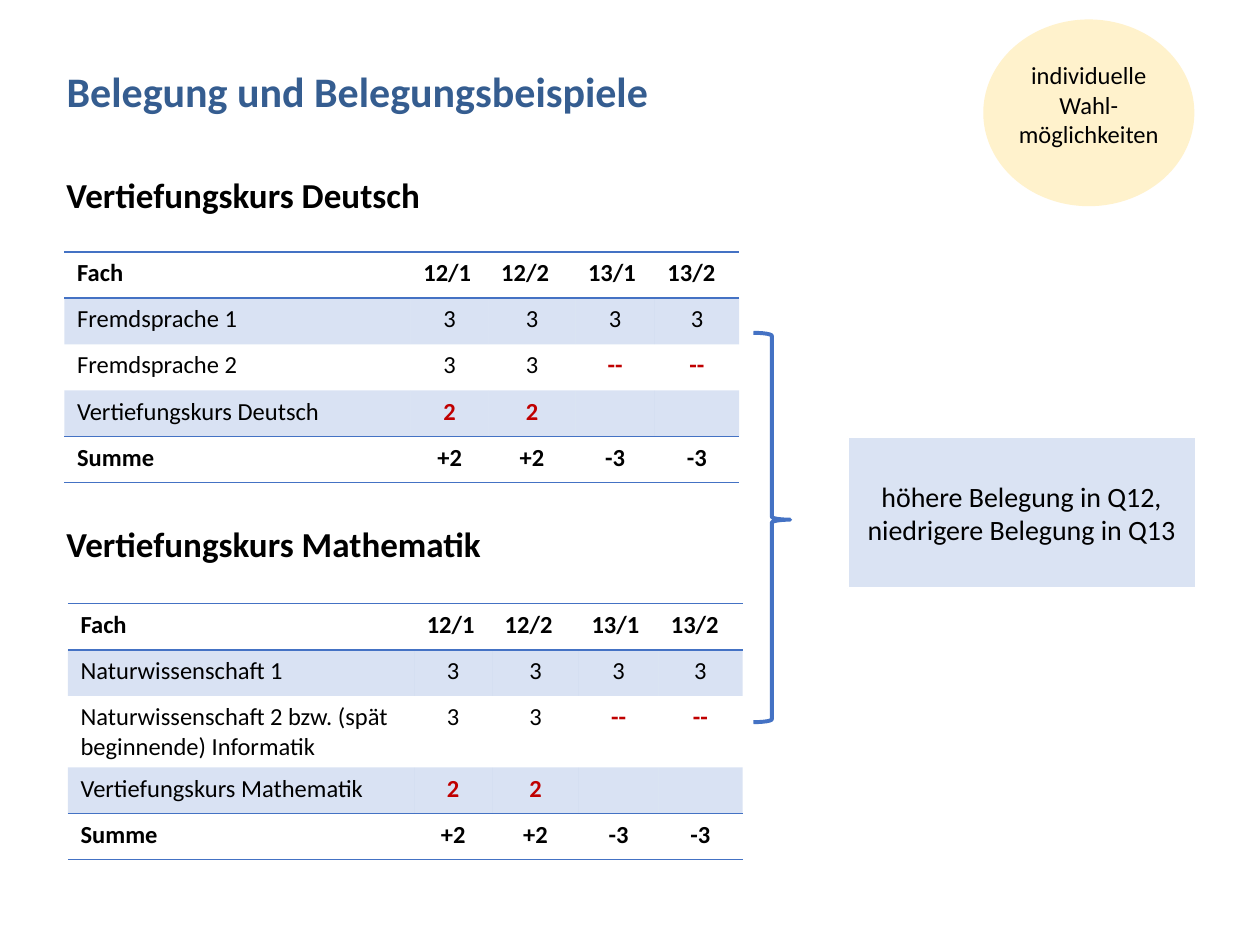
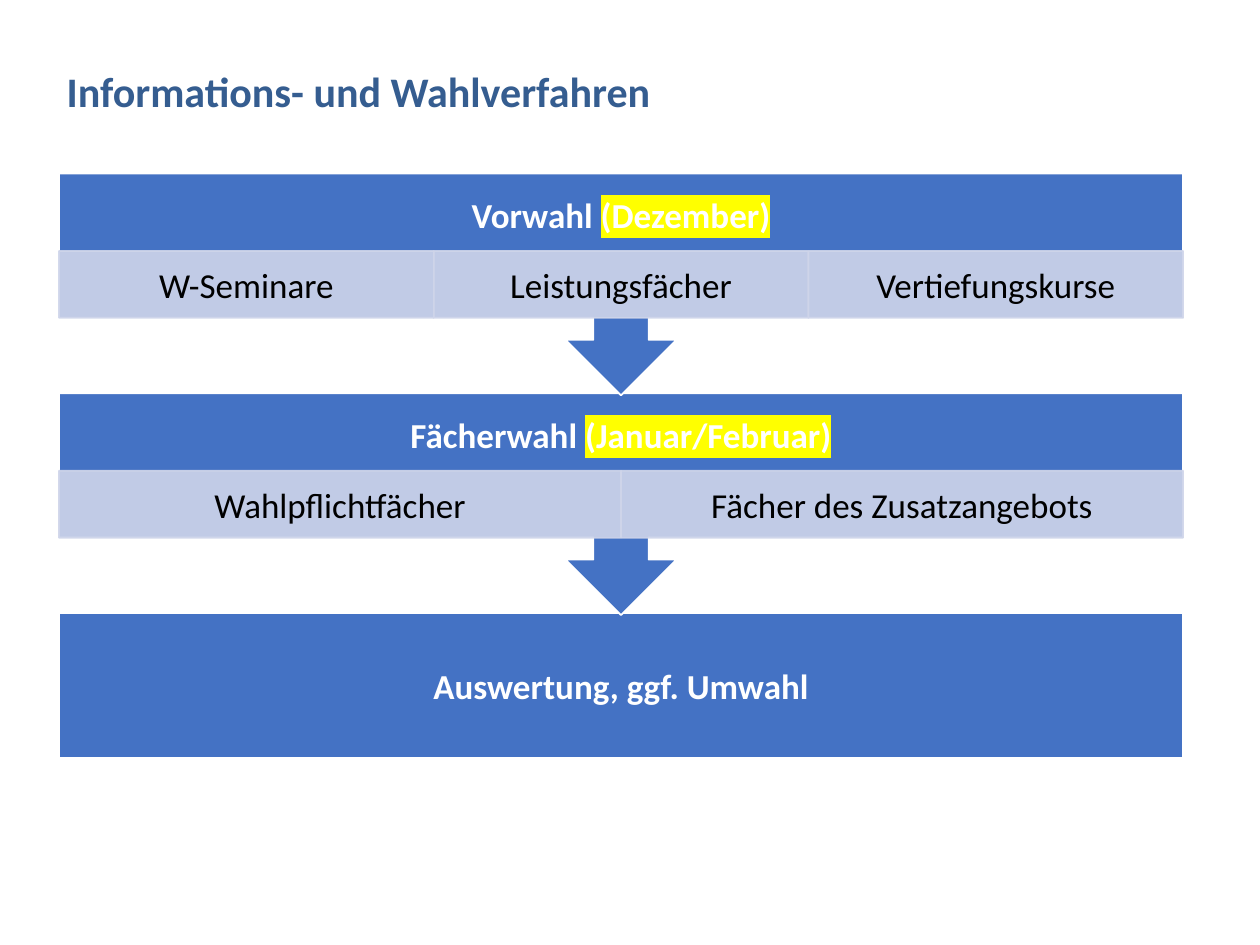
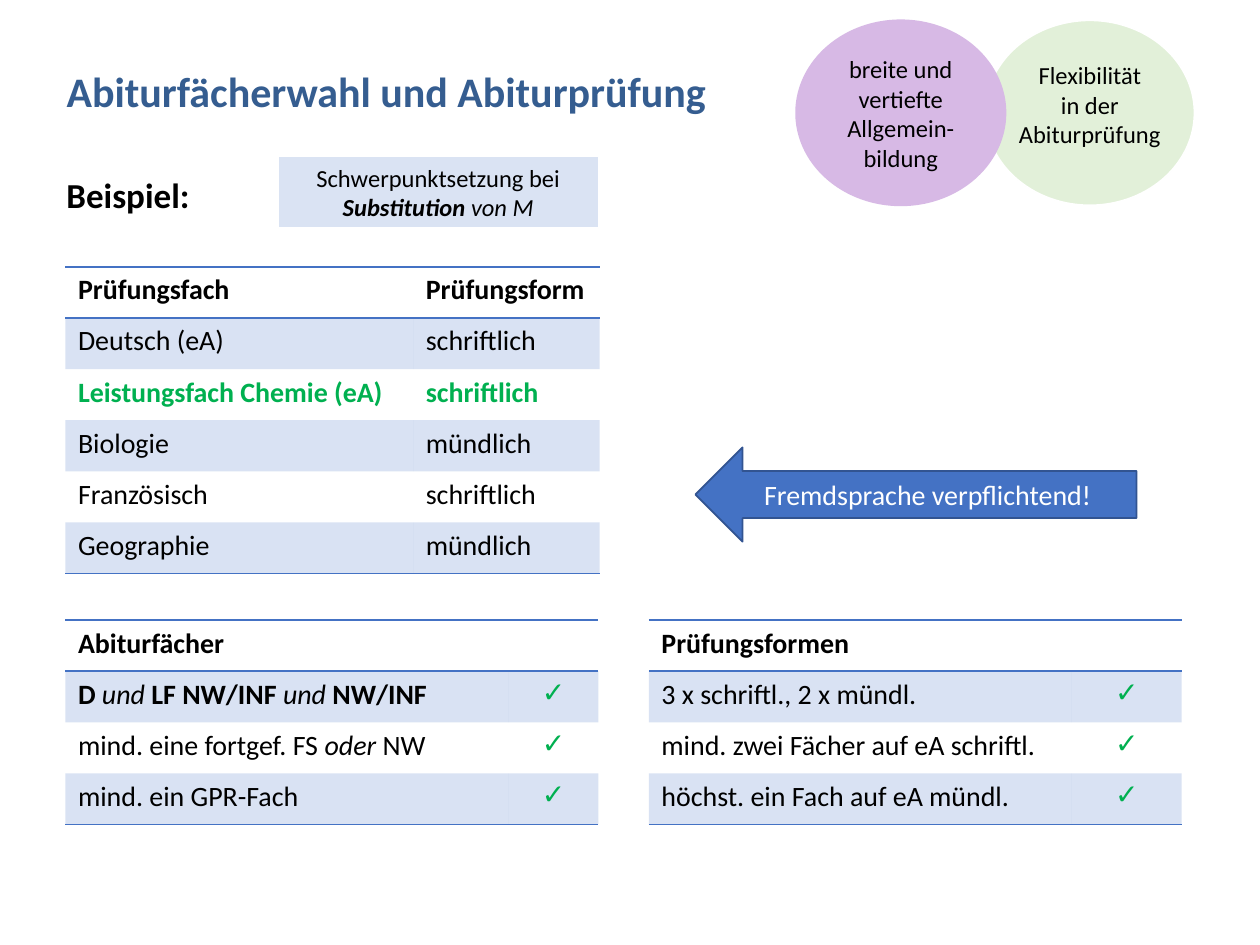
from pptx import Presentation
from pptx.dml.color import RGBColor
from pptx.enum.shapes import MSO_SHAPE as Kind
from pptx.enum.text import MSO_ANCHOR as Anchor, MSO_AUTO_SIZE as AutoSize, PP_ALIGN as Align
from pptx.oxml import parse_xml
from pptx.oxml.ns import nsdecls, qn
from pptx.util import Cm, Pt

BLUE, PALE_BLUE, LILAC = "4472C4", "DAE3F3", "CFD5EA"
TITLE_BLUE, ARROW_EDGE = "355D90", "325491"
RED, GREEN, YELLOW = "C00000", "00B050", "FFFF00"
BLACK, WHITE = "000000", "FFFFFF"
CREAM, MINT, PURPLE = "FFF2CC", "E2F0D9", "D7B9E5"
PLAIN_TABLE = "{2D5ABB26-0587-4C30-8999-92F81FD0307C}"

LEFT = 1.09
BADGE_TOP, BADGE_WIDTH, BADGE_HEIGHT = 0.41, 4.22, 3.73
STEP_LEFT, STEP_TOP, STEP_WIDTH, STEP_PITCH = 1.19, 3.5, 22.66, 4.43

CHECK = [("✓", {"font": "Arial", "color": GREEN, "bold": True})]
NONE = [("--", {"color": RED, "bold": True})]
TWO = [("2", {"color": RED, "bold": True})]
TERMS = ["Fach", "12/1", "12/2", "13/1", "13/2"]
SUM = ["Summe", "+2", "+2", "-3", "-3"]


def rgb(code):
    return RGBColor.from_string(code)


def set_alpha(color_holder, percent):
    """Make the solid colour inside an element partly transparent."""
    color = next(color_holder.iter(qn("a:srgbClr")))
    color.append(parse_xml(f'<a:alpha {nsdecls("a")} val="{percent * 1000}"/>'))


def write(frame, paras, align=Align.LEFT, anchor=Anchor.TOP, **style):
    """Fill a frame; a paragraph is a string or a list of strings and (text, style) spans."""
    frame.word_wrap = True
    frame.vertical_anchor = anchor
    for number, spans in enumerate(paras):
        para = frame.add_paragraph() if number else frame.paragraphs[0]
        para.alignment = align
        for span in [spans] if isinstance(spans, str) else spans:
            text, own = (span, {}) if isinstance(span, str) else span
            add_span(para, text, **{**style, **own})


def add_span(para, text, size=14, font="Calibri", color=BLACK, bold=False, italic=False,
             highlight=None):
    span = para.add_run()
    span.text = text
    span.font.size, span.font.name = Pt(size), font
    span.font.bold, span.font.italic = bold, italic
    span.font.color.rgb = rgb(color)
    if highlight:
        mark = parse_xml(f'<a:highlight {nsdecls("a")}><a:srgbClr val="{highlight}"/></a:highlight>')
        span.font._element.find(qn("a:solidFill")).addnext(mark)


def add_page(deck, title):
    page = deck.slides.add_slide(deck.slide_layouts[5])
    box = page.shapes.title
    box.left, box.top, box.width, box.height = Cm(LEFT), Cm(1.19), Cm(23.8), Cm(2.21)
    box.text_frame.auto_size = AutoSize.NONE
    write(box.text_frame, [title], size=24, color=TITLE_BLUE, bold=True)
    return page


def add_text(page, left, top, width, height, paras, **style):
    box = page.shapes.add_textbox(Cm(left), Cm(top), Cm(width), Cm(height))
    write(box.text_frame, paras, **style)


def add_subhead(page, top, text):
    add_text(page, LEFT, top, 9.1, 1.12, [text], size=20, bold=True)


def add_figure(page, kind, left, top, width, height, fill=None, line=WHITE, weight=1,
               alpha=None, paras=(), anchor=Anchor.MIDDLE, **style):
    figure = page.shapes.add_shape(kind, Cm(left), Cm(top), Cm(width), Cm(height))
    figure.shadow.inherit = False
    if fill:
        figure.fill.solid()
        figure.fill.fore_color.rgb = rgb(fill)
    else:
        figure.fill.background()
    figure.line.color.rgb = rgb(line)
    figure.line.width = Pt(weight)
    if alpha:
        properties = figure._element.spPr
        set_alpha(properties.find(qn("a:solidFill")), alpha)
        set_alpha(properties.find(qn("a:ln")), alpha)
    write(figure.text_frame, paras, align=Align.CENTER, anchor=anchor, **style)
    return figure


def add_badge(page, left, fill, line, paras, text_top=1.09, text_width=3.61):
    add_figure(page, Kind.OVAL, left, BADGE_TOP, BADGE_WIDTH, BADGE_HEIGHT, fill, line)
    add_text(page, left + (BADGE_WIDTH - text_width) / 2, text_top, text_width, 2.06,
             paras, align=Align.CENTER)


def add_borders(cell, sides):
    for place, side in enumerate(sides):
        cell._tc.get_or_add_tcPr().insert(place, parse_xml(
            f'<a:ln{side} {nsdecls("a")} w="12700"><a:solidFill><a:srgbClr val="{BLUE}"/>'
            f'</a:solidFill></a:ln{side}>'))


def add_grid(page, left, top, widths, row_height, rows, size, centered_from):
    """Add a banded table with ruled header and end; later columns are centred below the header."""
    frame = page.shapes.add_table(len(rows), len(widths), Cm(left), Cm(top),
                                  Cm(sum(widths)), Cm(row_height * len(rows)))
    table = frame.table
    table._tbl.tblPr.find(qn("a:tableStyleId")).text = PLAIN_TABLE
    for column, width in zip(table.columns, widths):
        column.width = Cm(width)
    for r, row in enumerate(rows):
        table.rows[r].height = Cm(row_height)
        ruled = r == 0 or row[0] == "Summe"
        sides = "TB" if ruled else "B" if r == len(rows) - 1 else ""
        for c, content in enumerate(row):
            cell = table.cell(r, c)
            if r % 2:
                cell.fill.solid()
                cell.fill.fore_color.rgb = rgb(BLUE)
                set_alpha(cell._tc.tcPr, 20)
            else:
                cell.fill.background()
            add_borders(cell, sides)
            if content:
                align = Align.CENTER if r and c >= centered_from else Align.LEFT
                write(cell.text_frame, [content], align=align, size=size, bold=ruled)
            else:
                cell.margin_top = cell.margin_bottom = 0


def add_step(page, index, heading, month, parts):
    """Add a callout with its heading and a row of equal parts."""
    top = STEP_TOP + index * STEP_PITCH
    callout = add_figure(page, Kind.DOWN_ARROW_CALLOUT, STEP_LEFT, top, STEP_WIDTH, 4.47, BLUE,
                         paras=[[heading + " ", (month, {"highlight": YELLOW})]],
                         anchor=Anchor.TOP, size=20, color=WHITE, bold=True)
    callout.text_frame.margin_top = Cm(0.4)
    width = STEP_WIDTH / len(parts)
    for number, part in enumerate(parts):
        add_figure(page, Kind.RECTANGLE, STEP_LEFT + number * width, top + 1.56, width, 1.35,
                   LILAC, LILAC, alpha=90, paras=[part], size=20)


def build_courses(deck):
    page = add_page(deck, "Belegung und Belegungsbeispiele")
    add_badge(page, 19.84, CREAM, CREAM, ["individuelle", "Wahl-", "möglichkeiten"])
    courses = [
        ("Vertiefungskurs Deutsch", 3.38, 1.3, 5.08, "Fremdsprache 1", "Fremdsprache 2"),
        ("Vertiefungskurs Mathematik", 10.41, 1.37, 12.17, "Naturwissenschaft 1",
         "Naturwissenschaft 2 bzw. (spät beginnende) Informatik"),
    ]
    for course, head_top, left, top, first, second in courses:
        add_subhead(page, head_top, course)
        rows = [TERMS, [first, "3", "3", "3", "3"], [second, "3", "3", NONE, NONE],
                [course, TWO, TWO, "", ""], SUM]
        add_grid(page, left, top, [6.98, 1.57, 1.75, 1.6, 1.7], 0.93, rows, 14, 1)
    brace = add_figure(page, Kind.RIGHT_BRACE, 15.19, 6.71, 0.74, 7.85, line=BLUE, weight=2.25)
    brace.adjustments[0], brace.adjustments[1] = 0.08, 0.48
    add_figure(page, Kind.RECTANGLE, 17.09, 8.81, 7.01, 3.05, PALE_BLUE, size=16,
               paras=["höhere Belegung in Q12,", "niedrigere Belegung in Q13"])


def build_procedure(deck):
    page = add_page(deck, "Informations- und Wahlverfahren")
    add_figure(page, Kind.RECTANGLE, STEP_LEFT, STEP_TOP + 2 * STEP_PITCH, STEP_WIDTH, 2.92, BLUE,
               paras=["Auswertung, ggf. Umwahl"], size=20, color=WHITE, bold=True)
    add_step(page, 1, "Fächerwahl", "(Januar/Februar)",
             ["Wahlpflichtfächer", "Fächer des Zusatzangebots"])
    add_step(page, 0, "Vorwahl", "(Dezember)",
             ["W-Seminare", "Leistungsfächer", "Vertiefungskurse"])


def build_exams(deck):
    page = add_page(deck, "Abiturfächerwahl und Abiturprüfung")
    add_subhead(page, 3.38, "Beispiel:")
    bold, italic = {"bold": True}, {"italic": True}
    green = {"color": GREEN, "bold": True}
    subjects = [
        ["Prüfungsfach", "Prüfungsform"],
        ["Deutsch (eA)", "schriftlich"],
        [[("Leistungsfach Chemie (eA)", green)], [("schriftlich", green)]],
        ["Biologie", "mündlich"],
        ["Französisch", "schriftlich"],
        ["Geographie", "mündlich"],
    ]
    subject_rules = [
        ["Abiturfächer", ""],
        [[("D ", bold), ("und ", italic), ("LF NW/INF ", bold), ("und ", italic),
          ("NW/INF", bold)], CHECK],
        [["mind. eine fortgef. FS ", ("oder ", italic), "NW"], CHECK],
        ["mind. ein GPR-Fach", CHECK],
    ]
    form_rules = [
        ["Prüfungsformen", ""],
        ["3 x schriftl., 2 x mündl.", CHECK],
        ["mind. zwei Fächer auf eA schriftl.", CHECK],
        ["höchst. ein Fach auf eA mündl.", CHECK],
    ]
    add_grid(page, 1.32, 5.38, [7.01, 3.76], 1.03, subjects, 16, 2)
    add_grid(page, 1.32, 12.5, [8.94, 1.8], 1.03, subject_rules, 16, 1)
    add_grid(page, 13.08, 12.5, [8.53, 2.21], 1.03, form_rules, 16, 1)
    add_badge(page, 19.86, MINT, WHITE, ["Flexibilität", "in der Abiturprüfung"])
    add_figure(page, Kind.RECTANGLE, 5.61, 3.15, 6.45, 1.45, PALE_BLUE, weight=0.75,
               paras=[["Schwerpunktsetzung bei ",
                       ("Substitution ", {"bold": True, "italic": True}), ("von M", italic)]])
    add_figure(page, Kind.LEFT_ARROW, 14.02, 9.02, 8.89, 1.9, BLUE, ARROW_EDGE,
               paras=["Fremdsprache verpflichtend!"], size=16, color=WHITE)
    add_badge(page, 16.05, PURPLE, PURPLE, ["breite und vertiefte Allgemein-bildung"], 0.97, 3.33)


def main():
    deck = Presentation()
    deck.slide_width, deck.slide_height = Cm(25.4), Cm(19.05)
    build_courses(deck)
    build_procedure(deck)
    build_exams(deck)
    deck.save("out.pptx")


if __name__ == "__main__":
    main()
